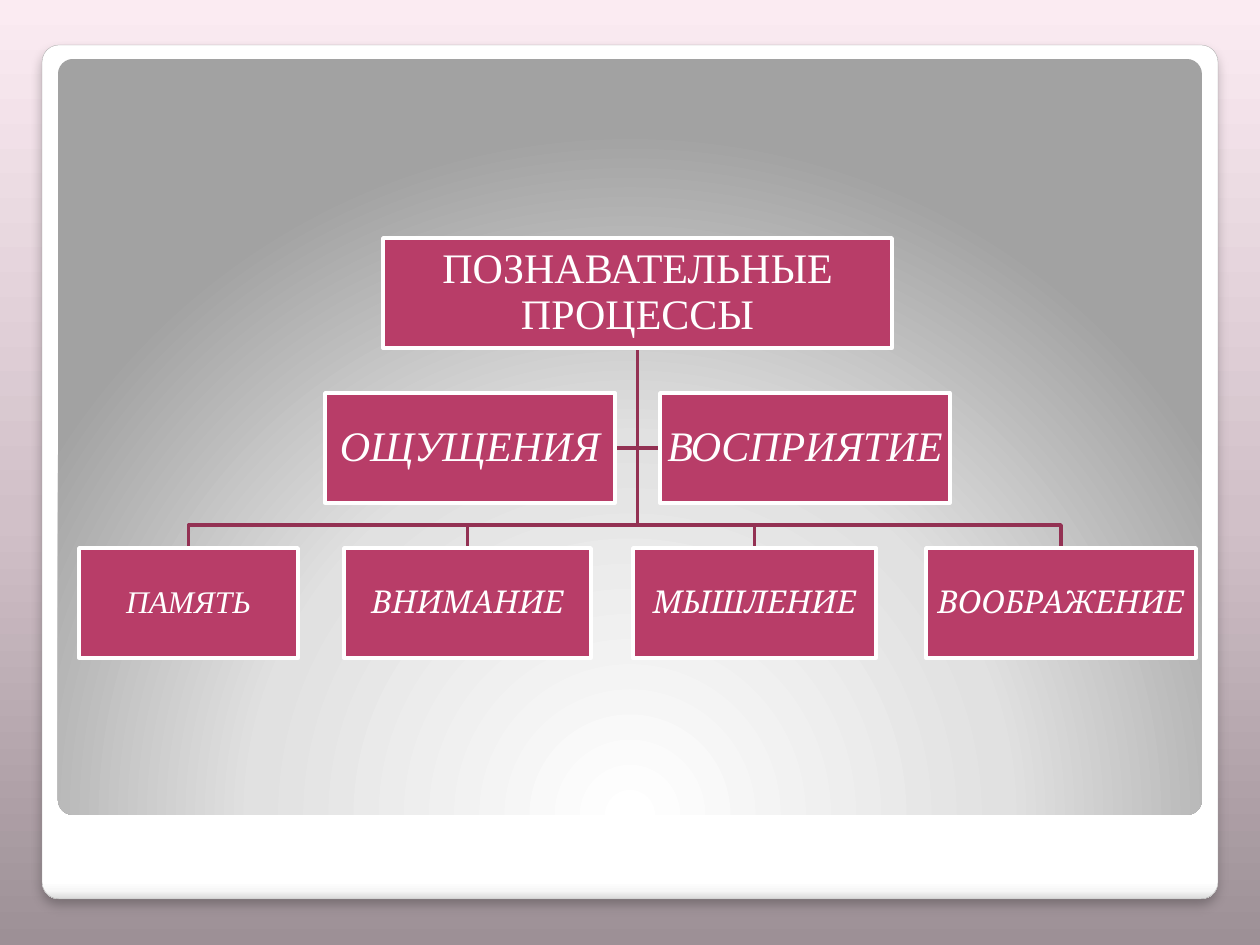
from lxml import etree
from pptx import Presentation
from pptx.dml.color import RGBColor
from pptx.enum.shapes import MSO_SHAPE as Shape
from pptx.enum.text import MSO_ANCHOR as Anchor, PP_ALIGN as Align
from pptx.oxml import parse_xml
from pptx.oxml.ns import nsdecls, qn
from pptx.util import Pt

COLORS = {"box": "B83D68", "branch": "933153", "white": "FFFFFF", "edge": "A4A4A4", "shadow": "000000"}
BACKGROUND = [(0, "9D9096"), (45, "D1C0C8"), (100, "FBEBF2")]
FRAME = [(0, "FFFFFF"), (98, "FFFFFF"), (99, "F7F7F7"), (100, "DADADA")]
PANEL = [(0, "FFFFFF"), (55, "E1E1E1"), (100, "A2A2A2")]
RADIAL = ('<a:path path="circle"><a:fillToRect l="50000" t="175000" '
          'r="50000" b="-75000"/></a:path>')

SERIF, CAMBRIA = "Times New Roman", "Cambria"
BOX_HEIGHT = 110
ROOT_TOP, SIDE_TOP, LEAF_TOP = 238, 393, 548
BUS_GAP = 23
ROOT = ("ПОЗНАВАТЕЛЬНЫЕ ПРОЦЕССЫ", 383, 509, SERIF)
SIDES = [("ОЩУЩЕНИЯ", 325, 290, SERIF), ("ВОСПРИЯТИЕ", 660, 290, SERIF)]
LEAVES = [
    ("ПАМЯТЬ", 79, 219, SERIF),
    ("ВНИМАНИЕ", 344, 247, CAMBRIA),
    ("МЫШЛЕНИЕ", 633, 243, CAMBRIA),
    ("ВООБРАЖЕНИЕ", 926, 270, CAMBRIA),
]


def px(value):
    return round(value * 914400 / 126)


def color(name):
    return RGBColor.from_string(COLORS[name])


def linear(angle):
    return f'<a:lin ang="{angle * 60000}" scaled="0"/>'


def set_gradient(holder, stops, direction):
    marks = "".join(f'<a:gs pos="{position * 1000}"><a:srgbClr val="{value}"/></a:gs>'
                    for position, value in stops)
    gradient = parse_xml(f'<a:gradFill {nsdecls("a")} rotWithShape="1">'
                         f'<a:gsLst>{marks}</a:gsLst>{direction}</a:gradFill>')
    holder.replace(holder.find(qn("a:solidFill")), gradient)


def add_shape(slide, kind, left, top, width, height):
    shape = slide.shapes.add_shape(kind, px(left), px(top), px(width), px(height))
    shape.shadow.inherit = False
    shape.fill.solid()
    return shape


def add_rounded(slide, bounds, stops, direction):
    shape = add_shape(slide, Shape.ROUNDED_RECTANGLE, *bounds)
    shape.adjustments[0] = 0.02
    shape.line.fill.background()
    set_gradient(shape.element.spPr, stops, direction)
    return shape


def add_shadow(shape):
    effects = shape.element.spPr.find(qn("a:effectLst"))
    shadow = etree.SubElement(effects, qn("a:outerShdw"), blurRad=str(Pt(6)), dist=str(Pt(4)),
                              dir="5400000", algn="t", rotWithShape="0")
    tint = etree.SubElement(shadow, qn("a:srgbClr"), val=COLORS["shadow"])
    etree.SubElement(tint, qn("a:alpha"), val="25000")


def add_branch(slide, points):
    start, *rest = [(px(x), px(y)) for x, y in points]
    builder = slide.shapes.build_freeform(*start)
    builder.add_line_segments(rest, close=False)
    branch = builder.convert_to_shape()
    branch.shadow.inherit = False
    branch.fill.background()
    branch.line.color.rgb = color("branch")
    branch.line.width = Pt(2)


def add_box(slide, box, top, size, italic):
    text, left, width, font = box
    shape = add_shape(slide, Shape.RECTANGLE, left, top, width, BOX_HEIGHT)
    shape.fill.fore_color.rgb = color("box")
    shape.line.color.rgb = color("white")
    shape.line.width = Pt(2)
    frame = shape.text_frame
    frame.word_wrap = True
    frame.vertical_anchor = Anchor.MIDDLE
    frame.margin_left = frame.margin_right = frame.margin_top = frame.margin_bottom = px(2)
    paragraph = frame.paragraphs[0]
    paragraph.alignment = Align.CENTER
    paragraph.line_spacing = 0.9
    run = paragraph.add_run()
    run.text = text
    run.font.name = font
    run.font.size = Pt(size)
    run.font.italic = italic
    run.font.color.rgb = color("white")


def center(box):
    return box[1] + box[2] / 2


def main():
    presentation = Presentation()
    presentation.slide_width, presentation.slide_height = px(1260), px(945)
    slide = presentation.slides.add_slide(presentation.slide_layouts[6])
    slide.background.fill.solid()
    set_gradient(slide.element.find(".//" + qn("p:bgPr")), BACKGROUND, linear(270))

    frame = add_rounded(slide, (42, 45, 1176, 854), FRAME, linear(90))
    frame.line.color.rgb = color("edge")
    frame.line.width = Pt(0.16)
    add_shadow(frame)
    add_rounded(slide, (58, 59, 1144, 756), PANEL, RADIAL)

    stem = center(ROOT)
    start = (stem, ROOT_TOP + BOX_HEIGHT)
    side_y = SIDE_TOP + BOX_HEIGHT / 2
    left_side, right_side = SIDES
    for end in (right_side[1], left_side[1] + left_side[2]):
        add_branch(slide, [start, (stem, side_y), (end, side_y)])
    bus = LEAF_TOP - BUS_GAP
    for leaf in LEAVES:
        x = center(leaf)
        add_branch(slide, [start, (stem, bus), (x, bus), (x, LEAF_TOP)])

    add_box(slide, ROOT, ROOT_TOP, 24, False)
    for boxes, top, size in ((LEAVES, LEAF_TOP, 18), (SIDES, SIDE_TOP, 24)):
        for box in boxes:
            add_box(slide, box, top, size, True)
    presentation.save("out.pptx")


if __name__ == "__main__":
    main()
